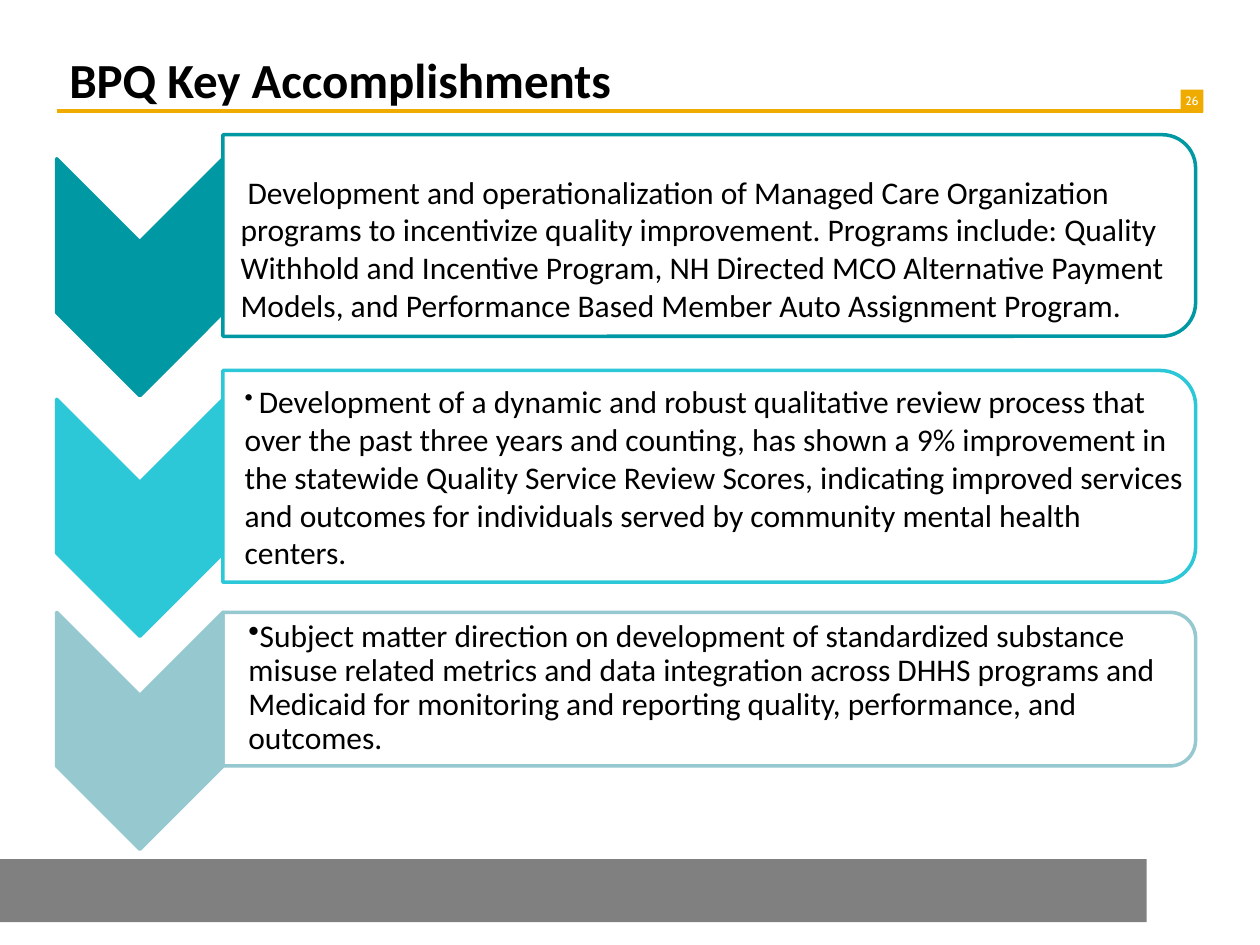
from dataclasses import dataclass

from lxml import etree
from pptx import Presentation
from pptx import util as u
from pptx.dml import color
from pptx.enum import shapes, text
from pptx.oxml import ns


@dataclass(frozen=True)
class Theme:
    accent: str = "F0AB00"
    footer: str = "808080"
    ink: str = "000000"
    paper: str = "FFFFFF"
    font: str = "Calibri"
    number_font: str = "Cabin"
    title_size: float = 28
    body_size: float = 18
    lead_size: float = 14
    number_size: float = 7
    rule: float = 2


THEME = Theme()
SHAPE = shapes.MSO_SHAPE
ANCHOR = text.MSO_ANCHOR

# Left and width of the two columns
CHEVRON_LEFT, CHEVRON_WIDTH, CHEVRON_HEIGHT = 32.4, 95, 135.4
CARD_LEFT, CARD_WIDTH, TEXT_WIDTH = 127.4, 555.8, 550.5

# Colour, chevron top, card top and height, then the text and its layout
ITEMS = [
    dict(tint="0098A3", chevron_top=90.7, card_top=77, card_height=115.2,
         opacity=90, text_top=90, text_height=103.7, inset=10.1, first=4,
         words="Development and operationalization of Managed Care Organization "
               "programs to incentivize quality improvement. Programs include: "
               "Quality Withhold and Incentive Program, NH Directed MCO "
               "Alternative Payment Models, and Performance Based Member Auto "
               "Assignment Program."),
    dict(tint="2CC8D8", chevron_top=228.2, card_top=211.7, card_height=121,
         opacity=90, text_top=218, text_height=108.7, inset=7.9, margin=4.5,
         bullet="•", lead=" ",
         words="Development of a dynamic and robust qualitative review process "
               "that over the past three years and counting, has shown a 9% "
               "improvement in the statewide Quality Service Review Scores, "
               "indicating improved services and outcomes for individuals "
               "served by community mental health centers."),
    dict(tint="95C8CF", chevron_top=349.9, card_top=349.9, card_height=87.8,
         opacity=0, text_top=353.5, text_height=79.2, inset=10.1, margin=4.5,
         bullet="•", spacing=0.9,
         words="Subject matter direction on development of standardized "
               "substance misuse related metrics and data integration across "
               "DHHS programs and Medicaid for monitoring and reporting "
               "quality, performance, and outcomes."),
]


def rgb(value):
    return color.RGBColor.from_string(value)


def write(box, words, *, size, font=THEME.font, ink=THEME.ink, bold=False,
          align=text.PP_ALIGN.LEFT, anchor=ANCHOR.MIDDLE, insets=(0, 0, 0, 0),
          wrap=True, spacing=None, margin=0, first=0, bullet=None, lead=None):
    """Put one formatted paragraph in a box; lead is a smaller opening run."""
    frame = box.text_frame
    frame.word_wrap, frame.vertical_anchor = wrap, anchor
    (frame.margin_left, frame.margin_top,
     frame.margin_right, frame.margin_bottom) = (u.Pt(inset) for inset in insets)
    para = frame.paragraphs[0]
    para.alignment = align
    if spacing:
        para.line_spacing = spacing
    props = para._p.get_or_add_pPr()
    props.set("marL", str(u.Pt(margin)))
    props.set("indent", str(u.Pt(first)))
    if bullet:
        etree.SubElement(props, ns.qn("a:buChar")).set("char", bullet)
    runs = [(lead, THEME.lead_size)] if lead else []
    for content, points in runs + [(words, size)]:
        span = para.add_run()
        span.text = content
        span.font.size, span.font.name = u.Pt(points), font
        span.font.bold = bold
        span.font.color.rgb = rgb(ink)


def add_block(page, kind, left, top, width, height, *, fill, line=None,
              opacity=100, turned=False):
    """Add a preset shape; a turned one fills the given box after 90 degrees."""
    if turned:
        left, top = left + (width - height) / 2, top + (height - width) / 2
        width, height = height, width
    block = page.shapes.add_shape(
        kind, u.Pt(left), u.Pt(top), u.Pt(width), u.Pt(height))
    block.rotation = 90 if turned else 0
    block.shadow.inherit = False
    if opacity:
        block.fill.solid()
        block.fill.fore_color.rgb = rgb(fill)
        if opacity < 100:
            tone = block._element.spPr.find(".//" + ns.qn("a:srgbClr"))
            etree.SubElement(tone, ns.qn("a:alpha")).set("val", str(opacity * 1000))
    else:
        block.fill.background()
    if line:
        block.line.color.rgb = rgb(line)
        block.line.width = u.Pt(THEME.rule)
    else:
        block.line.fill.background()
    return block


def add_frame(page, left, top, width):
    """Page number, rule under the title and footer band."""
    number = add_block(page, SHAPE.RECTANGLE, left + width - 18.2, top - 12.2,
                       13, 13, fill=THEME.accent)
    number.left = u.Pt(left + width - 13)
    write(number, "26", size=THEME.number_size, font=THEME.number_font,
          ink=THEME.paper, align=text.PP_ALIGN.CENTER, wrap=False)
    rule = page.shapes.add_connector(
        shapes.MSO_CONNECTOR.STRAIGHT,
        u.Pt(left), u.Pt(top), u.Pt(left + width), u.Pt(top))
    rule.line.color.rgb = rgb(THEME.accent)
    rule.line.width = u.Pt(THEME.rule)
    etree.SubElement(rule._element.spPr, ns.qn("a:effectLst"))
    add_block(page, SHAPE.RECTANGLE, 0, 491, 655.2, 36, fill=THEME.footer)


def add_title(page, left, top, width, height):
    title = page.shapes.title
    title.left, title.top = u.Pt(left), u.Pt(top)
    title.width, title.height = u.Pt(width), u.Pt(height)
    write(title, "BPQ Key Accomplishments", size=THEME.title_size, bold=True,
          anchor=ANCHOR.BOTTOM, insets=(7.2, 3.6, 7.2, 3.6))


def add_item(page, *, tint, chevron_top, card_top, card_height, opacity,
             text_top, text_height, inset, words, **layout):
    """One chevron with its outlined card and text."""
    add_block(page, SHAPE.CHEVRON, CHEVRON_LEFT, chevron_top, CHEVRON_WIDTH,
              CHEVRON_HEIGHT, fill=tint, line=tint, turned=True)
    add_block(page, SHAPE.ROUND_2_SAME_RECTANGLE, CARD_LEFT, card_top,
              CARD_WIDTH, card_height, fill=THEME.paper, line=tint,
              opacity=opacity, turned=True)
    box = page.shapes.add_textbox(u.Pt(CARD_LEFT), u.Pt(text_top),
                                  u.Pt(TEXT_WIDTH), u.Pt(text_height))
    write(box, words, size=THEME.body_size,
          insets=(inset, 0.7, 0.7, 0.7), **layout)


def main():
    deck = Presentation()
    deck.slide_width, deck.slide_height = u.Pt(720), u.Pt(540)
    page = deck.slides.add_slide(deck.slide_layouts[5])
    add_frame(page, 32.4, 63.4, 655.2)
    add_title(page, 32.4, 24.5, 627, 41)
    for item in ITEMS:
        add_item(page, **item)
    deck.save("out.pptx")


if __name__ == "__main__":
    main()
